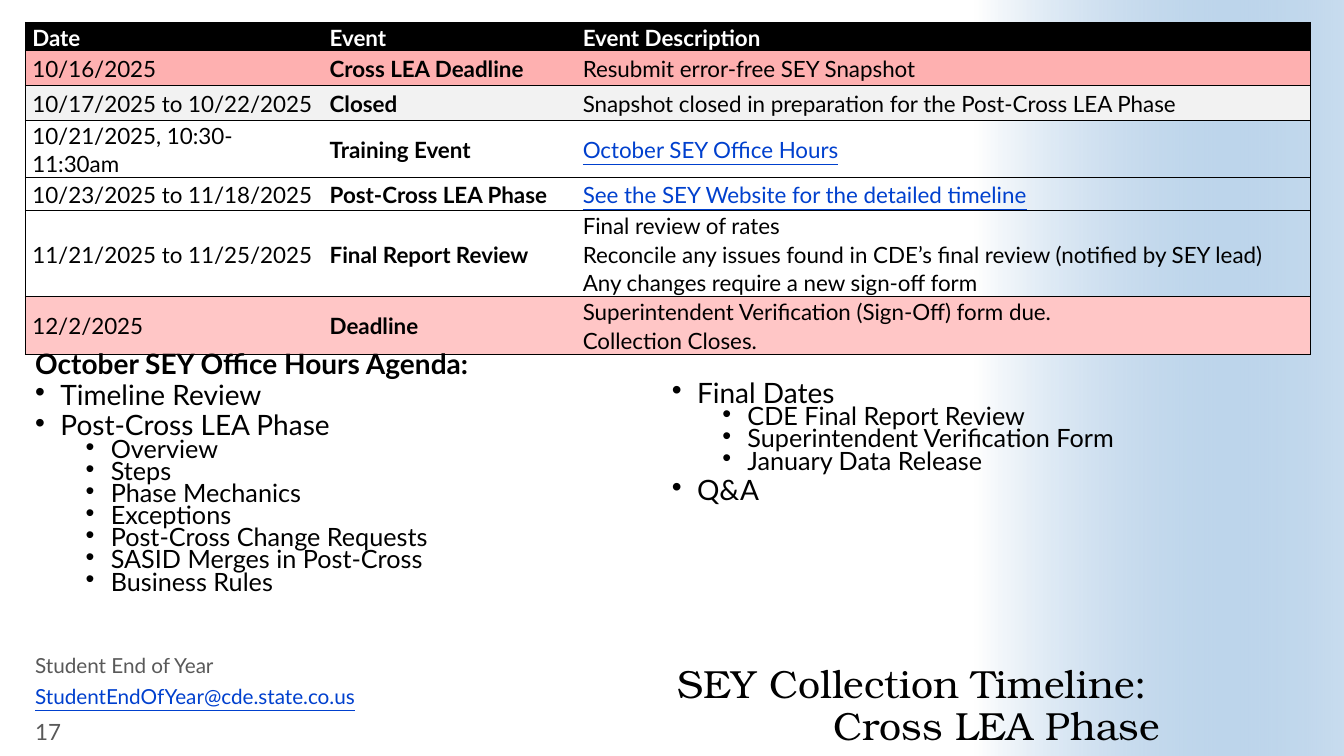
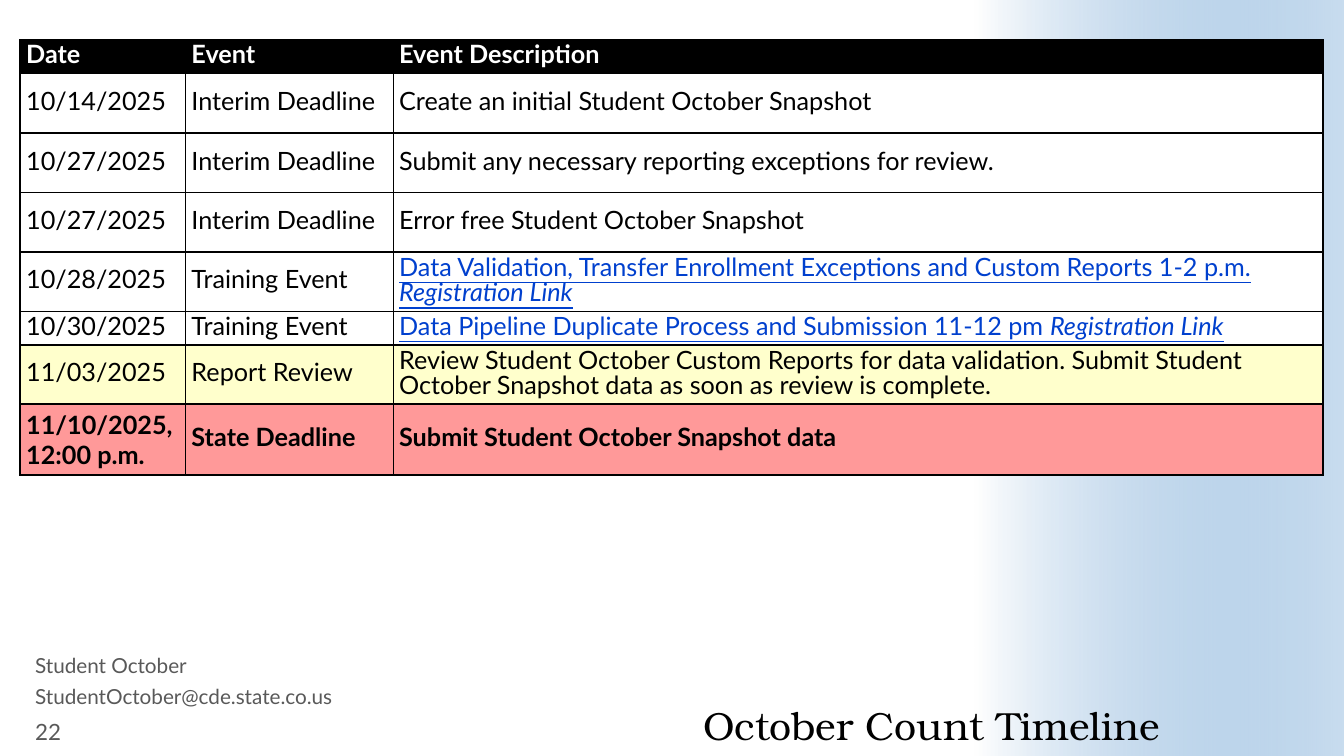
from copy import deepcopy
from pptx import Presentation
from pptx.dml.color import RGBColor as Rgb
from pptx.enum.shapes import MSO_SHAPE as Shape
from pptx.enum.text import MSO_ANCHOR as Anchor, MSO_AUTO_SIZE as Auto, PP_ALIGN as Align
from pptx.oxml import parse_xml
from pptx.oxml.ns import nsdecls, qn
from pptx.util import Inches, Pt
from lxml.etree import SubElement

WIDE, HIGH = Inches(13.33), Inches(7.5)
BLACK, WHITE = Rgb(0, 0, 0), Rgb(255, 255, 255)
BLUE, LINK, GREY = Rgb(0x48, 0x8B, 0xC9), Rgb(0, 0x40, 0xCE), Rgb(0x59, 0x59, 0x59)
ROSE, PINK, RED = Rgb(0xFE, 0xB0, 0xB0), Rgb(0xFF, 0xC6, 0xC6), Rgb(0xFF, 0x99, 0x99)
PALE, CREAM = Rgb(0xF2, 0xF2, 0xF2), Rgb(0xFF, 0xFF, 0xCC)
PLAIN_GRID = "{2D5ABB26-0587-4C30-8999-92F81FD0307C}"

BODY = {"name": "Lato", "size": Pt(18), "rgb": BLACK}
TITLE = {"name": "TeX Gyre Bonum", "size": Pt(28), "rgb": BLACK}
FOOT = BODY | {"size": Pt(14.8), "rgb": GREY}
PAGE = FOOT | {"size": Pt(16)}
TOPIC = BODY | {"size": Pt(20)}
BOLD, SLANT = {"bold": True}, {"italic": True}
HEAD = {"bold": True, "rgb": WHITE}
URL = {"rgb": LINK, "underline": True}

PHASE = {"font": BODY | {"size": Pt(16)}, "para": {"line_spacing": 1.07},
         "pad": (0.07, 0), "outer": 0.5, "inner": 0}
COUNT = {"font": BODY, "para": {"line_spacing": Pt(18)},
         "pad": (0.06, 0.03), "outer": 1.34, "inner": 1}


def place(x, y, w, h):
    """Turn percentages of the slide into lengths."""
    return [int(total * part / 100) for total, part in zip((WIDE, HIGH) * 2, (x, y, w, h))]


def assign(item, values):
    """Set attributes from a dict."""
    for key, val in values.items():
        setattr(item, key, val)


def ink(font, look):
    """Apply a character format."""
    for key, val in look.items():
        setattr(font.color if key == "rgb" else font, key, val)


def fill_para(para, text, look):
    """Write a string or a list of formatted runs into a paragraph."""
    for part, extra in [(text, {})] if isinstance(text, str) else text:
        for num, line in enumerate(part.split("\n")):
            if num:
                para.add_line_break()
            run = para.add_run()
            run.text = line
            ink(run.font, look | extra)
    for gap in para._p.findall(qn("a:br")):
        gap.insert(0, deepcopy(run._r.find(qn("a:rPr"))))


def fill_frame(frame, paras, look, layout):
    """Write paragraphs that share one format."""
    for num, text in enumerate(paras):
        para = frame.add_paragraph() if num else frame.paragraphs[0]
        assign(para, layout)
        fill_para(para, text, look)


def add_box(slide, spot):
    """Add a wrapping text box and return its frame."""
    frame = slide.shapes.add_textbox(*place(*spot)).text_frame
    frame.word_wrap = True
    return frame


def add_band(slide):
    """Put the fading side band on the slide's layout."""
    band = slide.shapes.add_shape(Shape.RECTANGLE, *place(72.54, 0, 27.46, 100))
    band.shadow.inherit = False
    band.line.fill.background()
    band.fill.gradient()
    band.fill.gradient_angle = 0
    for stop, tone in zip(band.fill.gradient_stops, (WHITE, BLUE)):
        stop.color.rgb = tone
    tones = list(band.element.iter(qn("a:srgbClr")))
    SubElement(tones[-1], qn("a:alpha")).set("val", "30000")
    band.element.nvSpPr.cNvPr.set("id", "20")
    slide.slide_layout.shapes.element.insert(2, band.element)


def add_title(slide, text):
    """Move and fill the title."""
    title = slide.shapes.title
    assign(title, dict(zip(("left", "top", "width", "height"), place(31.96, 86, 54.31, 13.07))))
    frame = title.text_frame
    assign(frame, {"margin_left": 0, "margin_right": 0, "margin_top": 0, "margin_bottom": 0,
                   "word_wrap": True, "auto_size": Auto.NONE,
                   "vertical_anchor": Anchor.BOTTOM})
    fill_frame(frame, [text], TITLE, {"alignment": Align.RIGHT, "line_spacing": 0.9})


def add_foot(slide, name, mail, page):
    """Stack the collection name, its address and the page number."""
    for num, text in enumerate((name, mail, page)):
        frame = add_box(slide, (1.88, 86.27 + 4.2 * num, 29.18, 4.13))
        last = num == 2
        frame.vertical_anchor = Anchor.MIDDLE if last else Anchor.TOP
        fill_frame(frame, [text], PAGE if last else FOOT, {"line_spacing": 1.0 if last else 0.8})


def add_edges(cell, widths):
    """Draw a cell's left, right, top and bottom borders."""
    for side, width in reversed(list(zip("LRTB", widths))):
        if width:
            cell._tc.get_or_add_tcPr().insert(0, parse_xml(
                f'<a:ln{side} {nsdecls("a")} w="{Pt(width)}"><a:solidFill>'
                f'<a:srgbClr val="{BLACK}"/></a:solidFill></a:ln{side}>'))


def add_cell(cell, text, tone, look, ends, head):
    """Fill, pad, border and write one cell."""
    side, rim = (Inches(pad) for pad in look["pad"])
    assign(cell, {"margin_left": side, "margin_right": side, "margin_top": rim,
                  "margin_bottom": rim,
                  "vertical_anchor": Anchor.TOP if head else Anchor.MIDDLE})
    if tone is None:
        cell.fill.background()
    else:
        cell.fill.solid()
        cell.fill.fore_color.rgb = tone
    outer = look["outer"]
    add_edges(cell, [outer if end else look["inner"] for end in ends] + [outer, outer])
    paras = [text] if isinstance(text, str) else text
    fill_frame(cell.text_frame, paras, look["font"] | (HEAD if head else {}), look["para"])


def add_grid(slide, left, top, cols, rows, look):
    """Add a table with a header row; each row has a height, a fill and cells."""
    rows = [(rows[0], BLACK, ("Date", "Event", "Event Description")), *rows[1:]]
    spot = place(left, top, sum(cols), sum(row[0] for row in rows))
    grid = slide.shapes.add_table(len(rows), len(cols), *spot).table
    assign(grid, {"first_row": True, "horz_banding": False})
    grid._tbl.tblPr.find(qn("a:tableStyleId")).text = PLAIN_GRID
    for col, share in zip(grid.columns, cols):
        col.width = int(WIDE * share / 100)
    for num, (share, tone, texts) in enumerate(rows):
        grid.rows[num].height = int(HIGH * share / 100)
        for pos, text in enumerate(texts):
            ends = (pos == 0, pos == len(cols) - 1)
            add_cell(grid.cell(num, pos), text, tone, look, ends, num == 0)
    return grid


def add_list(slide, spot, items, head=None):
    """Add a two-level bullet list, with a heading if given."""
    frame = add_box(slide, spot)
    rows = ([(None, head)] if head else []) + items
    for num, (level, text) in enumerate(rows):
        para = frame.add_paragraph() if num else frame.paragraphs[0]
        assign(para, {"line_spacing": 0.5, "level": level or 0,
                      "space_before": Pt((5 if level else 10) if num else 0)})
        if level is not None:
            props = para._p.get_or_add_pPr()
            props.set("marL", str(Inches(0.75 if level else 0.25)))
            props.set("indent", str(Inches(-0.25)))
            SubElement(props, qn("a:buFont")).set("typeface", "Arial")
            SubElement(props, qn("a:buChar")).set("char", "•")
        fill_para(para, text, BODY if level else TOPIC | ({} if level == 0 else BOLD))


def strong(text):
    """Give a cell's text in bold."""
    return [[(text, BOLD)]]


def linked(text, tail=""):
    """Give a cell's text as a link, with an italic tail."""
    return [[(text, URL)] + ([(tail, URL | SLANT)] if tail else [])]


def phase_slide(slide):
    """Build the phase timeline and the agenda."""
    add_title(slide, "SEY Collection Timeline: \nCross LEA Phase")
    add_grid(slide, 1.88, 2.93, (22.13, 18.83, 54.69), [
        2.67,
        (4.53, ROSE, ("10/16/2025", strong("Cross LEA Deadline"),
                      "Resubmit error-free SEY Snapshot")),
        (4.67, PALE, ("10/17/2025 to 10/22/2025", strong("Closed"),
                      "Snapshot closed in preparation for the Post-Cross LEA Phase")),
        (4.4, None, ("10/21/2025, 10:30-11:30am", strong("Training Event"),
                     linked("October SEY Office Hours"))),
        (4.4, None, ("10/23/2025 to 11/18/2025", strong("Post-Cross LEA Phase"),
                     linked("See the SEY Website for the detailed timeline"))),
        (4.4, None, ("11/21/2025 to 11/25/2025", strong("Final Report Review"), [
            "Final review of rates",
            "Reconcile any issues found in CDE’s final review (notified by SEY lead)",
            "Any changes require a new sign-off form"])),
        (5.47, PINK, ("12/2/2025", strong("Deadline"), [
            "Superintendent Verification (Sign-Off) form due.", "Collection Closes."])),
    ], PHASE)
    add_list(slide, (1.88, 47.07, 47.37, 38.8), [
        (0, "Timeline Review"), (0, "Post-Cross LEA Phase"),
        (1, "Overview"), (1, "Steps"), (1, "Phase Mechanics"), (1, "Exceptions"),
        (1, "Post-Cross Change Requests"), (1, "SASID Merges in Post-Cross"),
        (1, "Business Rules")], "October SEY Office Hours Agenda:")
    add_list(slide, (49.25, 50.93, 47.37, 34.94), [
        (0, "Final Dates"), (1, "CDE Final Report Review"),
        (1, "Superintendent Verification Form"), (1, "January Data Release"), (0, "Q&A")])
    add_foot(slide, "Student End of Year", [("StudentEndOfYear@cde.state.co.us", URL)], "17")


def count_slide(slide):
    """Build the October count timeline."""
    add_title(slide, "October Count Timeline")
    grid = add_grid(slide, 1.5, 5.33, (12.3, 15.45, 69.17), [
        4.4,
        (7.87, WHITE, ("10/14/2025", "Interim Deadline",
                       "Create an initial Student October Snapshot")),
        (7.87, WHITE, ("10/27/2025", "Interim Deadline",
                       "Submit any necessary reporting exceptions for review.")),
        (7.87, WHITE, ("10/27/2025", "Interim Deadline",
                       "Error free Student October Snapshot")),
        (7.87, WHITE, ("10/28/2025", "Training Event", linked(
            "Data Validation, Transfer Enrollment Exceptions and Custom Reports 1-2 p.m. ",
            "Registration Link"))),
        (4.4, WHITE, ("10/30/2025", "Training Event", linked(
            "Data Pipeline Duplicate Process and Submission 11-12 pm ", "Registration Link"))),
        (7.87, CREAM, ("11/03/2025", "Report Review",
                       "Review Student October Custom Reports for data validation. "
                       "Submit Student October Snapshot data as soon as review is complete.")),
        (9.33, RED, (strong("11/10/2025, \n12:00 p.m."), strong("State Deadline"),
                     strong("Submit Student October Snapshot data"))),
    ], COUNT)
    grid.cell(7, 0).text_frame.paragraphs[0].line_spacing = 1.0
    add_foot(slide, "Student October", "StudentOctober@cde.state.co.us", "22")


def main():
    """Build and save the two slides."""
    deck = Presentation()
    assign(deck, {"slide_width": WIDE, "slide_height": HIGH})
    first, second = (deck.slides.add_slide(deck.slide_layouts[5]) for _ in range(2))
    add_band(first)
    phase_slide(first)
    count_slide(second)
    deck.save("out.pptx")


if __name__ == "__main__":
    main()
